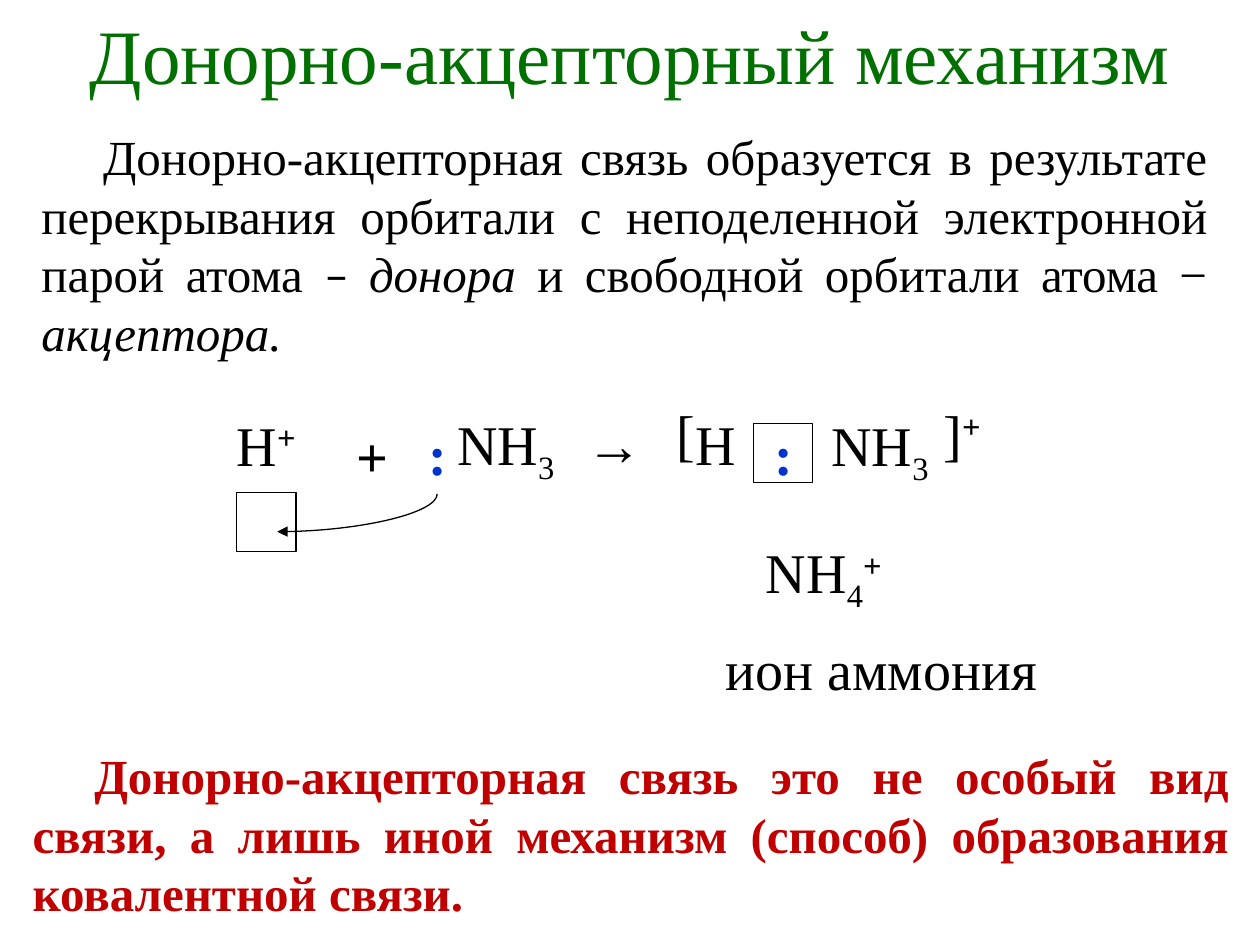
from dataclasses import dataclass

from lxml import etree
from pptx import Presentation
from pptx.dml.color import RGBColor
from pptx.enum.shapes import MSO_CONNECTOR, MSO_SHAPE
from pptx.enum.text import MSO_ANCHOR, MSO_AUTO_SIZE, PP_ALIGN
from pptx.oxml.ns import qn
from pptx.util import Inches, Pt

RECTANGLE = MSO_SHAPE.RECTANGLE
CURVE = MSO_CONNECTOR.CURVE
TOP, MIDDLE = MSO_ANCHOR.TOP, MSO_ANCHOR.MIDDLE
LEFT, CENTER, JUSTIFY = PP_ALIGN.LEFT, PP_ALIGN.CENTER, PP_ALIGN.JUSTIFY
FIT, NO_FIT = MSO_AUTO_SIZE.SHAPE_TO_FIT_TEXT, MSO_AUTO_SIZE.NONE

# The slide is a grid of 100 columns by 75 rows
CELL = Inches(0.1)
COLUMNS, ROWS = 100, 75


@dataclass(frozen=True)
class Theme:
    font: str = "Times New Roman"
    dash_font: str = "Calibri"
    title: int = 44
    formula: int = 32
    body: int = 28
    outline: float = 0.75
    black: RGBColor = RGBColor(0, 0, 0)
    green: RGBColor = RGBColor(0x00, 0x70, 0x00)
    red: RGBColor = RGBColor(0xC0, 0x00, 0x00)
    blue: RGBColor = RGBColor(0x00, 0x33, 0xCC)


THEME = Theme()
BOLD = {"bold": True}
ITALIC = {"italic": True}
SUB = {"baseline": -25}
SUPER = {"baseline": 30}
CHARGE = ("+", BOLD | SUPER)
LINE_HEIGHT = 6.4
ORBITAL = 4.7


def cells(*lengths):
    return [round(length * CELL) for length in lengths]


def add_text(slide, box, runs, size, color=THEME.black, wrap=True, anchor=TOP,
             align=LEFT, indent=0, fit=FIT):
    """Place one paragraph; each run is a (text, format) pair."""
    frame = slide.shapes.add_textbox(*cells(*box)).text_frame
    frame.word_wrap, frame.auto_size, frame.vertical_anchor = wrap, fit, anchor
    paragraph = frame.paragraphs[0]
    paragraph.alignment = align
    if indent:
        paragraph._p.get_or_add_pPr().set("indent", str(cells(indent)[0]))
    for text, extra in runs:
        run = paragraph.add_run()
        run.text = text
        run.font.color.rgb = color
        values = {"name": THEME.font, "size": Pt(size)} | extra
        baseline = values.pop("baseline", 0)
        for attribute, value in values.items():
            setattr(run.font, attribute, value)
        if baseline:
            run._r.get_or_add_rPr().set("baseline", str(baseline * 1000))


def add_title(slide, box):
    add_text(slide, box, [("Донорно-акцепторный механизм", {})], THEME.title,
             THEME.green, anchor=MIDDLE, align=CENTER, fit=NO_FIT)


def add_statement(slide, box, runs, color=THEME.black):
    add_text(slide, box, runs, THEME.body, color, anchor=MIDDLE,
             align=JUSTIFY, indent=4.9)


def add_orbital(slide, column, row):
    orbital = slide.shapes.add_shape(
        RECTANGLE, *cells(column, row, ORBITAL, ORBITAL))
    orbital.shadow.inherit = False
    orbital.fill.background()
    orbital.line.color.rgb = THEME.black
    orbital.line.width = Pt(THEME.outline)


def add_pair_transfer(slide, start, end):
    """Curved arrow that leaves downwards and arrives from the right."""
    run, drop = start[0] - end[0], end[1] - start[1]
    middle_x, middle_y = (start[0] + end[0]) / 2, (start[1] + end[1]) / 2
    # The preset leaves sideways, so its upright frame is turned by 90 degrees
    arrow = slide.shapes.add_connector(CURVE, *cells(
        middle_x - drop / 2, middle_y - run / 2,
        middle_x + drop / 2, middle_y + run / 2))
    arrow.line.color.rgb = THEME.black
    arrow.line.width = Pt(THEME.outline)
    properties = arrow._element.spPr
    properties.find(qn("a:xfrm")).set("rot", str(90 * 60000))
    properties.find(qn("a:prstGeom")).set("prst", "curvedConnector2")
    etree.SubElement(arrow.line._get_or_add_ln(), qn("a:tailEnd"),
                     type="triangle")
    etree.SubElement(properties, qn("a:effectLst"))


def add_reaction(slide, box):
    left, top, _, _ = box
    # column, row, width, wrap, colour, runs
    terms = [
        # Proton and ammonia with its lone pair
        (0, 0.9, 7, False, THEME.black, [("Н", {}), CHARGE]),
        (9.5, 1.8, 4.6, False, THEME.black, [("+", BOLD)]),
        (17.5, 0.8, 10.9, True, THEME.black, [("NН", {}), ("3", SUB)]),
        (15.2, 1.6, 3.5, False, THEME.blue, [(":", BOLD)]),
        (27.8, 0.8, 6.5, False, THEME.black, [("→", {})]),
        # Shared pair in brackets
        (36.4, 0.8, 5.3, False, THEME.black, [("H", {})]),
        (42.7, 1.6, 3.2, True, THEME.blue, [(":", BOLD)]),
        (47.2, 0.9, 10.9, True, THEME.black, [("NH", {}), ("3", SUB)]),
        (34.9, 0, 3.5, False, THEME.black, [("[", {})]),
        (56.1, 0, 8.7, True, THEME.black, [("]", {}), CHARGE]),
        # Product and its name
        (42, 11, 13.4, True, THEME.black, [("NH", {}), ("4", SUB), CHARGE]),
        (38.8, 18.7, 27, False, THEME.black, [("ион аммония", {})]),
    ]
    for column, row, width, wrap, color, runs in terms:
        add_text(slide, (left + column, top + row, width, LINE_HEIGHT), runs,
                 THEME.formula, color, wrap)
    # Empty orbital of the proton, then the filled one
    for column, row in ((1, 7.9), (42, 2.4)):
        add_orbital(slide, left + column, top + row)
    add_pair_transfer(slide, (left + 16.9, top + 8), (left + 4.2, top + 11))


def main():
    presentation = Presentation()
    presentation.slide_width, presentation.slide_height = cells(COLUMNS, ROWS)
    slide = presentation.slides.add_slide(presentation.slide_layouts[6])
    # Definition
    add_statement(slide, (2.3, 9.4, 94.5, 19.9), [
        ("Донорно-акцепторная связь образуется в результате перекрывания "
         "орбитали с неподеленной электронной парой атома ", {}),
        ("– ", {"name": THEME.dash_font}),
        ("донора", ITALIC),
        (" и свободной орбитали атома − ", {}),
        ("акцептора.", ITALIC),
    ])
    add_title(slide, (5, -0.1, 90, 8.7))
    add_reaction(slide, (17.8, 31.2, 65.8, 25.1))
    # Conclusion
    add_statement(slide, (1.6, 58.6, 96.9, 15.1), [
        ("Донорно-акцепторная связь это не особый вид связи, а лишь иной "
         "механизм (способ) образования ковалентной связи.", BOLD),
    ], THEME.red)
    presentation.save("out.pptx")


if __name__ == "__main__":
    main()
